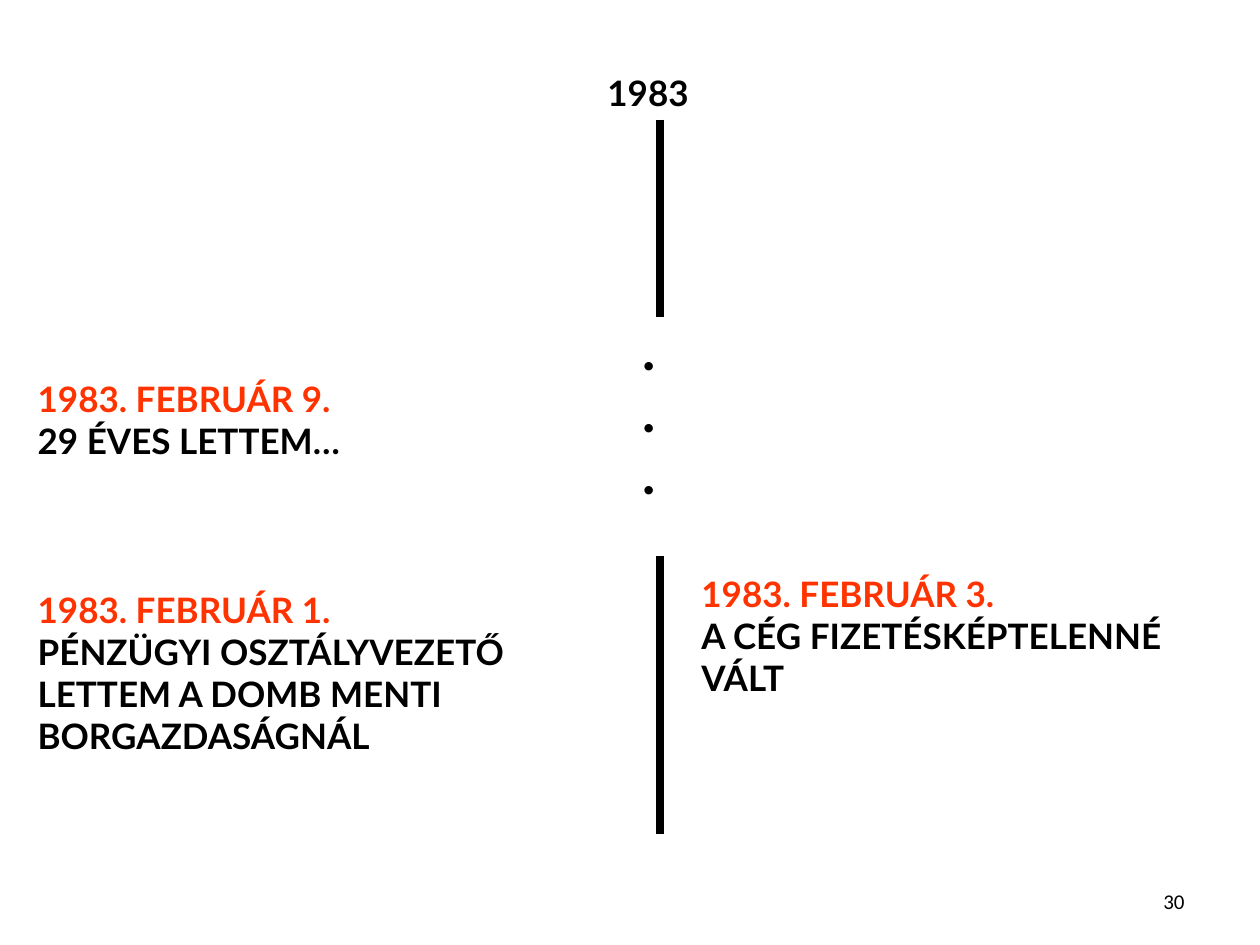
import pptx
import pptx.dml.color
import pptx.enum.shapes
import pptx.enum.text
import pptx.oxml.ns
import pptx.util
import lxml.etree

Cm = pptx.util.Cm
Pt = pptx.util.Pt
ALIGN = pptx.enum.text.PP_ALIGN
ANCHOR = pptx.enum.text.MSO_ANCHOR


def colour(value):
    return pptx.dml.color.RGBColor.from_string(value)


def add_run(para, text, size=20, shade="000000", font="Lato", bold=True):
    span = para.add_run()
    span.text = text
    span.font.name = font
    span.font.size = Pt(size)
    span.font.bold = bold
    span.font.color.rgb = colour(shade)


deck = pptx.Presentation()
deck.slide_width = Cm(25.4)
deck.slide_height = Cm(19.05)
page = deck.slides.add_slide(deck.slide_layouts[5])

title = page.shapes.title
title.left, title.top, title.width, title.height = Cm(11.99), Cm(1.32), Cm(2.31), Cm(1.09)
title.text_frame.word_wrap = False
title.text_frame.auto_size = pptx.enum.text.MSO_AUTO_SIZE.NONE
title.text_frame.vertical_anchor = ANCHOR.TOP
para = title.text_frame.paragraphs[0]
para.alignment = ALIGN.LEFT
add_run(para, "1983")

axis = Cm(13.31)
for top, bottom in [(2.41, 6.4), (11.2, 16.81)]:
    line = page.shapes.add_connector(
        pptx.enum.shapes.MSO_CONNECTOR.STRAIGHT, axis, Cm(top), axis, Cm(bottom))
    line.line.color.rgb = colour("000000")
    line.line.width = Pt(4.5)
    lxml.etree.SubElement(line._element.spPr, pptx.oxml.ns.qn("a:effectLst"))

dots = page.shapes.add_textbox(Cm(12.7), Cm(6.81), Cm(1.19), Cm(3.73))
dots.text_frame.word_wrap = True
for index in range(3):
    para = dots.text_frame.add_paragraph() if index else dots.text_frame.paragraphs[0]
    para.line_spacing = 0.5
    para.space_before = Pt(16)
    add_run(para, ".", size=32)

events = [
    (0.51, 7.49, 12.01, 1.96, "1983. FEBRUÁR 9. ", "29 ÉVES LETTEM…"),
    (0.51, 11.73, 12.01, 3.63, "1983. FEBRUÁR 1. ",
     "PÉNZÜGYI OSZTÁLYVEZETŐ LETTEM A DOMB MENTI BORGAZDASÁGNÁL"),
    (13.89, 11.42, 10.39, 2.79, "1983. FEBRUÁR 3. ", "A CÉG FIZETÉSKÉPTELENNÉ VÁLT"),
]
for left, top, width, height, date, event in events:
    box = page.shapes.add_textbox(Cm(left), Cm(top), Cm(width), Cm(height))
    box.text_frame.word_wrap = True
    para = box.text_frame.paragraphs[0]
    add_run(para, date, shade="FF3300")
    para.add_line_break()
    add_run(para, event)

number = page.shapes.add_textbox(Cm(18.21), Cm(17.65), Cm(5.92), Cm(1.02))
number.text_frame.word_wrap = True
number.text_frame.vertical_anchor = ANCHOR.MIDDLE
para = number.text_frame.paragraphs[0]
para.alignment = ALIGN.RIGHT
add_run(para, "30", size=12, font="Calibri", bold=False)

deck.save("out.pptx")
